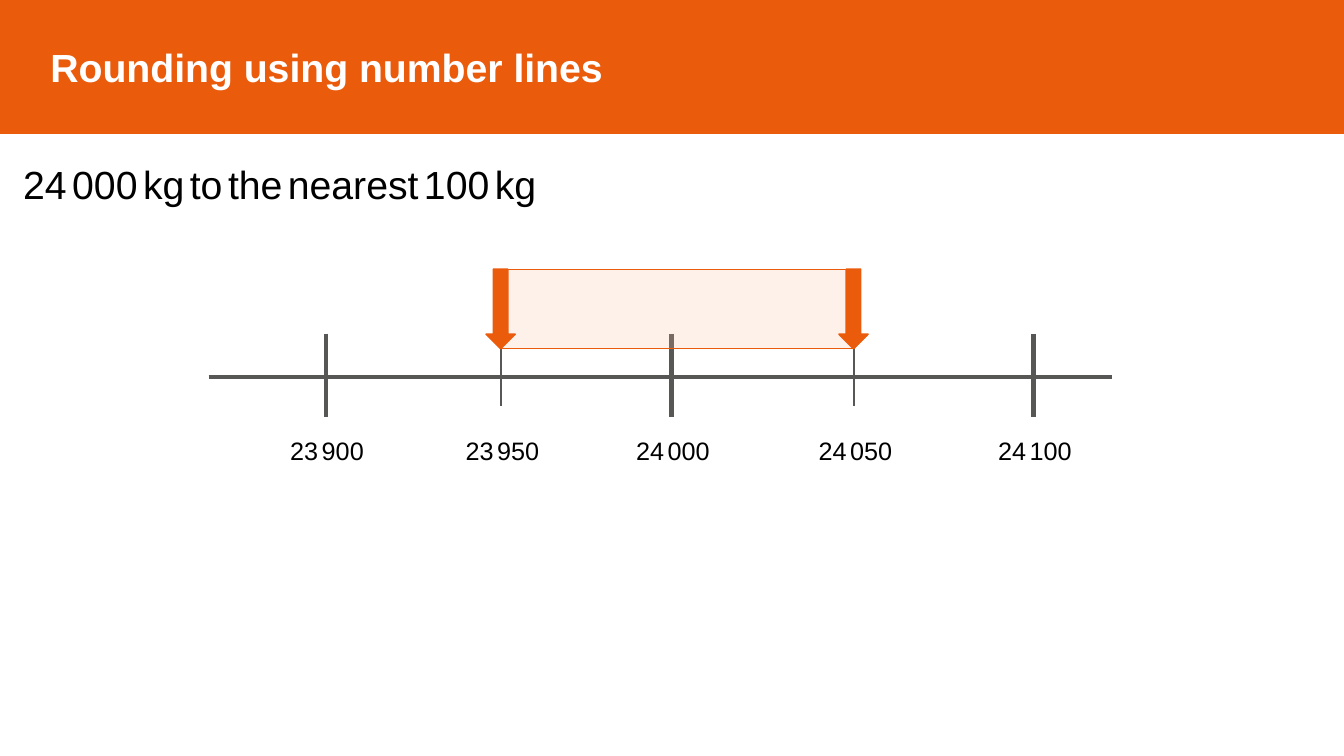
import pptx
import pptx.util
import pptx.dml.color
import pptx.enum.shapes
import pptx.enum.text
import lxml.etree
from dataclasses import dataclass
from pptx.util import Inches


@dataclass(frozen=True)
class Theme:
    font: str = "Arial"
    orange: str = "EA5B0C"
    peach: str = "F9BC9A"
    grey: str = "575756"
    black: str = "000000"
    white: str = "FFFFFF"
    large: int = 28
    small: int = 18


theme = Theme()
rgb = pptx.dml.color.RGBColor.from_string
kinds = pptx.enum.shapes.MSO_SHAPE
space = " "


def write(para, text, size):
    """Fill a paragraph, setting its thin spaces at half size."""
    para.font.name = theme.font
    para.font.color.rgb = rgb(theme.black)
    for i, part in enumerate(text.split(space)):
        if i:
            gap = para.add_run()
            gap.text = space
            gap.font.size = pptx.util.Pt(size / 2)
        run = para.add_run()
        run.text = part
        run.font.size = pptx.util.Pt(size)


def paint(shape, fill, width):
    """Give a shape a flat fill and an orange outline."""
    shape.fill.solid()
    shape.fill.fore_color.rgb = rgb(fill)
    shape.line.color.rgb = rgb(theme.orange)
    shape.line.width = pptx.util.Pt(width)


deck = pptx.Presentation()
deck.slide_width, deck.slide_height = Inches(13.33), Inches(7.5)
slide = deck.slides.add_slide(deck.slide_layouts[1])
shapes = slide.shapes

# Title band
title = shapes.title
title.left, title.top = Inches(0), Inches(0)
title.width, title.height = Inches(13.33), Inches(1.32)
paint(title, theme.orange, 1)
frame = title.text_frame
frame.text = "Rounding using number lines"
frame.margin_left = Inches(0.5)
frame.vertical_anchor = pptx.enum.text.MSO_ANCHOR.MIDDLE
para = frame.paragraphs[0]
para.alignment = pptx.enum.text.PP_ALIGN.LEFT
para.font.name = theme.font
para.font.size = pptx.util.Pt(theme.large)
para.font.bold = True
para.font.color.rgb = rgb(theme.white)

# Question, without a bullet
body = slide.placeholders[1]
body.left, body.top = Inches(0.13), Inches(1.59)
body.width, body.height = Inches(12.88), Inches(5.09)
body.text_frame.auto_size = pptx.enum.text.MSO_AUTO_SIZE.NONE
para = body.text_frame.paragraphs[0]
para.line_spacing = 0.9
para.space_before = pptx.util.Pt(10)
write(para, "24 000 kg to the nearest 100 kg", theme.large)
props = para._p.get_or_add_pPr()
props.set("marL", "0")
props.set("indent", "0")
bullet = pptx.oxml.parse_xml(
    '<a:buNone xmlns:a="http://schemas.openxmlformats.org/drawingml/2006/main"/>')
props.insert_element_before(bullet, "a:tabLst", "a:defRPr", "a:extLst")

# Number line: axis, long ticks at the hundreds, short ticks at the halves
axis = 3.74
low, high = 4.97, 8.47
ticks = [
    (3.23, "23 900"),
    (low, "23 950"),
    (6.66, "24 000"),
    (high, "24 050"),
    (10.25, "24 100"),
]
lines = [(2.07, axis, 11.03, axis, 3)]
for x, label in ticks:
    top, end, width = (3.46, 4.03, 2) if label.endswith("50") else (3.31, 4.14, 3)
    lines.append((x, top, x, end, width))
for x1, y1, x2, y2, width in lines:
    line = shapes.add_connector(
        pptx.enum.shapes.MSO_CONNECTOR.STRAIGHT,
        Inches(x1), Inches(y1), Inches(x2), Inches(y2))
    line.line.color.rgb = rgb(theme.grey)
    line.line.width = pptx.util.Pt(width)
    lxml.etree.SubElement(
        line._element.spPr, pptx.oxml.ns.qn("a:effectLst"))

# Tick labels
for x, label in ticks:
    box = shapes.add_textbox(
        Inches(x - 0.45), Inches(4.27), Inches(0.95), Inches(0.4))
    box.text_frame.word_wrap = False
    box.text_frame.auto_size = pptx.enum.text.MSO_AUTO_SIZE.SHAPE_TO_FIT_TEXT
    write(box.text_frame.paragraphs[0], label, theme.small)

# Rounding interval
top, height = Inches(2.67), Inches(0.79)
span = shapes.add_shape(
    kinds.RECTANGLE, Inches(low), top, Inches(high - low), height)
span.shadow.inherit = False
paint(span, theme.peach, 0.5)
tint = span.fill._xPr.find(".//" + pptx.oxml.ns.qn("a:srgbClr"))
lxml.etree.SubElement(tint, pptx.oxml.ns.qn("a:alpha")).set("val", "20000")

# Arrows at the interval's ends
for x in (low, high):
    arrow = shapes.add_shape(
        kinds.DOWN_ARROW, Inches(x - 0.15), top, Inches(0.29), height)
    arrow.shadow.inherit = False
    paint(arrow, theme.orange, 1)

deck.save("out.pptx")
